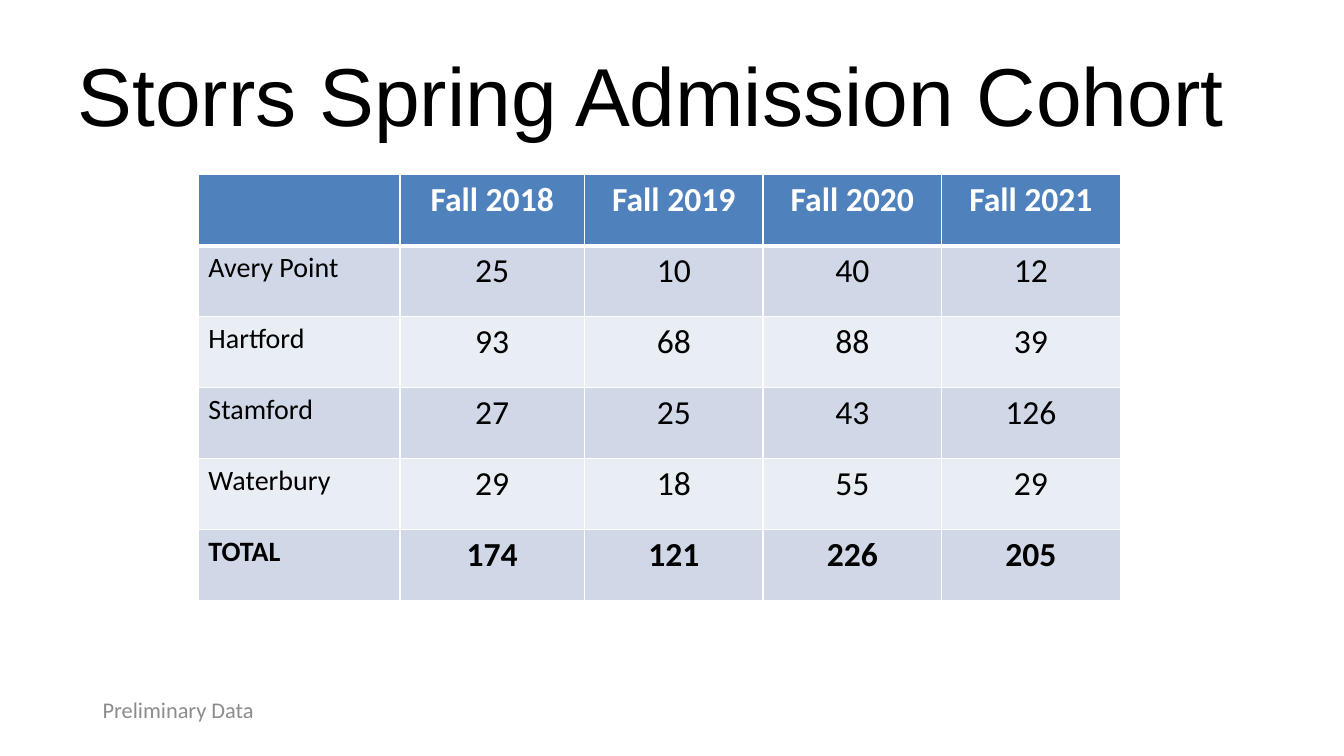
"""Build the slide with the Storrs spring admission cohort table."""
from lxml import etree
from pptx import Presentation
from pptx.dml.color import RGBColor
from pptx.enum.text import MSO_ANCHOR, MSO_AUTO_SIZE, PP_ALIGN
from pptx.oxml.ns import qn
from pptx.util import Cm, Pt

LEFT, CENTER = PP_ALIGN.LEFT, PP_ALIGN.CENTER
TOP, MIDDLE = MSO_ANCHOR.TOP, MSO_ANCHOR.MIDDLE
NO_AUTOFIT = MSO_AUTO_SIZE.NONE

BLACK = RGBColor(0x00, 0x00, 0x00)
WHITE = RGBColor(0xFF, 0xFF, 0xFF)
GRAY = RGBColor(0x8C, 0x8C, 0x8C)
HEADER_BLUE = RGBColor(0x4F, 0x81, 0xBD)
BAND_DARK = RGBColor(0xD0, 0xD8, 0xE8)
BAND_LIGHT = RGBColor(0xE9, 0xED, 0xF4)

COHORT_ROWS = [
    ["", "Fall 2018", "Fall 2019", "Fall 2020", "Fall 2021"],
    ["Avery Point", "25", "10", "40", "12"],
    ["Hartford", "93", "68", "88", "39"],
    ["Stamford", "27", "25", "43", "126"],
    ["Waterbury", "29", "18", "55", "29"],
    ["TOTAL", "174", "121", "226", "205"],
]
COLUMN_WIDTHS = [5.08, 4.65, 4.5, 4.5, 4.5]
ROW_HEIGHT = 1.79


def write_text(text_frame, text, color, alignment=LEFT, **font_format):
    paragraph = text_frame.paragraphs[0]
    paragraph.text = text
    paragraph.alignment = alignment
    paragraph.font.color.rgb = color
    for name, value in font_format.items():
        setattr(paragraph.font, name, value)


def add_border(cell, side, width):
    line = etree.SubElement(cell._tc.get_or_add_tcPr(), qn(f"a:ln{side}"), w=str(Pt(width)))
    fill = etree.SubElement(line, qn("a:solidFill"))
    etree.SubElement(fill, qn("a:srgbClr"), val=str(WHITE))


presentation = Presentation()
presentation.slide_width = Cm(33.87)
presentation.slide_height = Cm(19.05)
slide = presentation.slides.add_slide(presentation.slide_layouts[5])

title = slide.shapes.title
title.left, title.top, title.width, title.height = Cm(1.7), Cm(0.76), Cm(30.48), Cm(3.18)
title.text_frame.auto_size = NO_AUTOFIT
title.text_frame.vertical_anchor = MIDDLE
write_text(title.text_frame, "Storrs Spring Admission Cohort", BLACK,
           name="Arial", size=Pt(58.7))

table_frame = slide.shapes.add_table(
    len(COHORT_ROWS), len(COLUMN_WIDTHS), Cm(5), Cm(4.4),
    Cm(sum(COLUMN_WIDTHS)), Cm(ROW_HEIGHT * len(COHORT_ROWS)))
table = table_frame.table
for column, width in zip(table.columns, COLUMN_WIDTHS):
    column.width = Cm(width)

for row_index, values in enumerate(COHORT_ROWS):
    table.rows[row_index].height = Cm(ROW_HEIGHT)
    is_header = row_index == 0
    is_total = row_index == len(COHORT_ROWS) - 1
    band = BAND_DARK if row_index % 2 else BAND_LIGHT
    for column_index, value in enumerate(values):
        cell = table.cell(row_index, column_index)
        for side in "LRTB":
            touches_header_edge = (row_index, side) in [(0, "B"), (1, "T")]
            add_border(cell, side, 3 if touches_header_edge else 1)
        cell.fill.solid()
        cell.fill.fore_color.rgb = HEADER_BLUE if is_header else band
        write_text(cell.text_frame, value, WHITE if is_header else BLACK,
                   CENTER if column_index else LEFT, name="Calibri",
                   size=Pt(24 if column_index else 20), bold=is_header or is_total)

footnote = slide.shapes.add_textbox(Cm(2.34), Cm(17.53), Cm(7.62), Cm(1.02))
footnote_format = {"word_wrap": True, "vertical_anchor": TOP, "margin_top": 0}
for name, value in footnote_format.items():
    setattr(footnote.text_frame, name, value)
write_text(footnote.text_frame, "Preliminary Data", GRAY, name="Calibri", size=Pt(16))

presentation.save("out.pptx")
